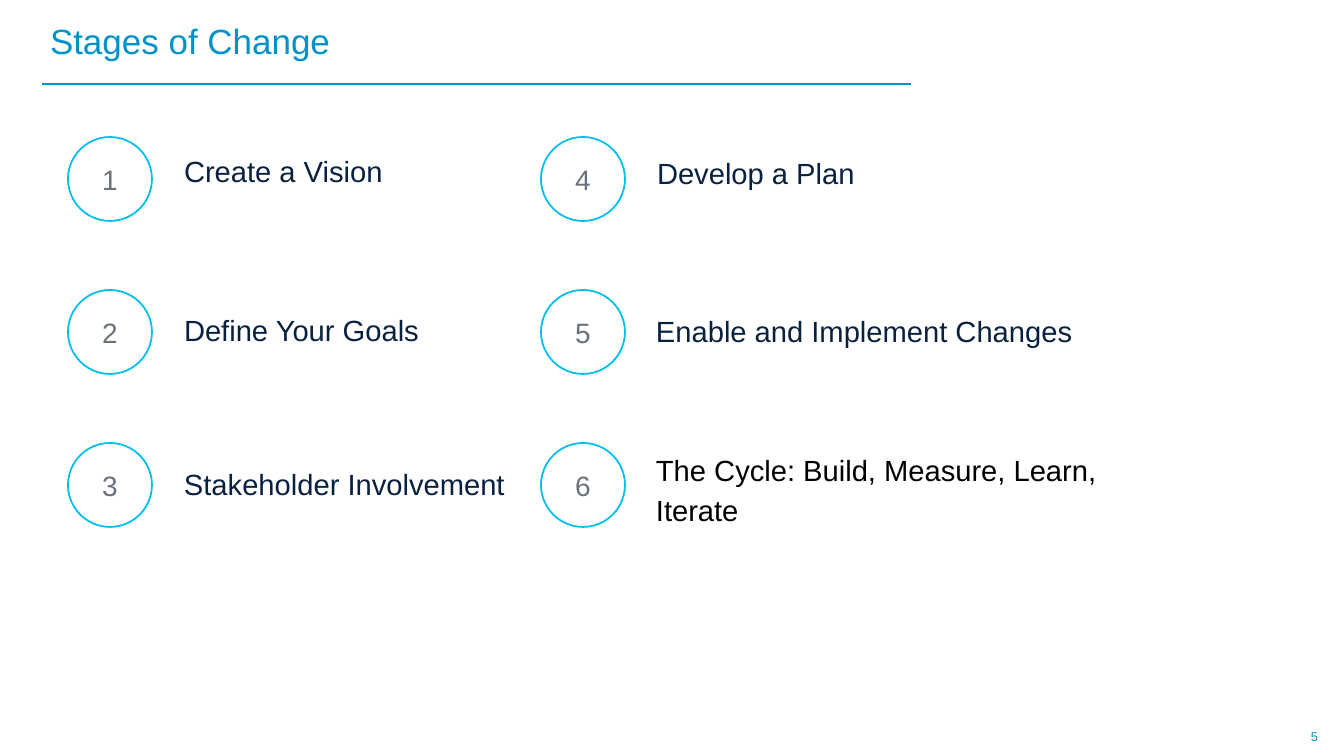
from lxml import etree
from pptx import Presentation
from pptx import util as u
from pptx.dml.color import RGBColor
from pptx.enum import shapes, text
from pptx.oxml.ns import qn

PX = 914400 / 84
COLORS = {
    "title": "0193C7",
    "rule": "0093C7",
    "ring": "00BEEE",
    "number": "6A7179",
    "label": "09213F",
    "black": "000000",
}
MIDDLE = text.MSO_ANCHOR.MIDDLE
TOP = text.MSO_ANCHOR.TOP
LEFT = text.PP_ALIGN.LEFT
CENTER = text.PP_ALIGN.CENTER


class StageSlide:
    font = "Arial"

    def __init__(self, deck):
        self.page = deck.slides.add_slide(deck.slide_layouts[5])

    @staticmethod
    def scale(*lengths):
        return [u.Emu(round(length * PX)) for length in lengths]

    @staticmethod
    def color(name):
        return RGBColor.from_string(COLORS[name])

    def set_text(self, box, words, size, color, align=LEFT, anchor=MIDDLE, spacing=1.0):
        frame = box.text_frame
        frame.word_wrap = True
        frame.auto_size = text.MSO_AUTO_SIZE.NONE
        frame.vertical_anchor = anchor
        frame.margin_left, frame.margin_right = self.scale(8, 8)
        frame.margin_top, frame.margin_bottom = self.scale(4, 4)
        frame.text = words
        para = frame.paragraphs[0]
        para.alignment = align
        para.line_spacing = spacing
        para.space_before = u.Pt(0)
        for span in para.runs:
            span.font.name = self.font
            span.font.size = u.Pt(size)
            span.font.color.rgb = self.color(color)

    def title(self, words, left, top, width, height):
        box = self.page.shapes.title
        box.left, box.top, box.width, box.height = self.scale(left, top, width, height)
        self.set_text(box, words, 30, "title", spacing=0.9)

    def label(self, words, left, top, width, height, size=25, color="label", **style):
        box = self.page.shapes.add_textbox(*self.scale(left, top, width, height))
        self.set_text(box, words, size, color, **style)

    def rule(self, left, top, right):
        line = self.page.shapes.add_connector(
            shapes.MSO_CONNECTOR.STRAIGHT, *self.scale(left, top, right, top))
        line.line.color.rgb = self.color("rule")
        line.line.width = u.Pt(1.5)
        etree.SubElement(line._element.spPr, qn("a:effectLst"))

    def ring(self, number, left, top, size):
        circle = self.page.shapes.add_shape(
            shapes.MSO_SHAPE.OVAL, *self.scale(left, top, size, size))
        circle.shadow.inherit = False
        circle.fill.background()
        circle.line.color.rgb = self.color("ring")
        circle.line.width = u.Pt(1.5)
        self.set_text(circle, str(number), 24, "number", align=CENTER)


def main():
    deck = Presentation()
    deck.slide_width, deck.slide_height = StageSlide.scale(1344, 756)
    slide = StageSlide(deck)
    slide.rule(42, 84, 911)
    slide.title("Stages of Change", 42, 20, 814, 47)
    slide.label("5", 1285, 716, 59, 40, size=11, color="title", align=CENTER)

    stages = [
        ("Create a Vision", 176, 155, 291, {}),
        ("Define Your Goals", 176, 314, 291, {}),
        ("Stakeholder Involvement", 176, 468, 396, {}),
        ("Develop a Plan", 649, 155, 367, {"anchor": TOP}),
        ("Enable and Implement Changes", 648, 315, 439, {}),
        ("The Cycle: Build, Measure, Learn, Iterate", 648, 469, 530,
         {"color": "black", "spacing": 1.15}),
    ]
    for index, (words, left, top, width, style) in enumerate(stages):
        column, row = divmod(index, 3)
        slide.ring(index + 1, 68 + 473 * column, 137 + 153 * row, 84)
        slide.label(words, left, top, width, 36, **{"spacing": 0.9, **style})

    deck.save("out.pptx")


if __name__ == "__main__":
    main()
